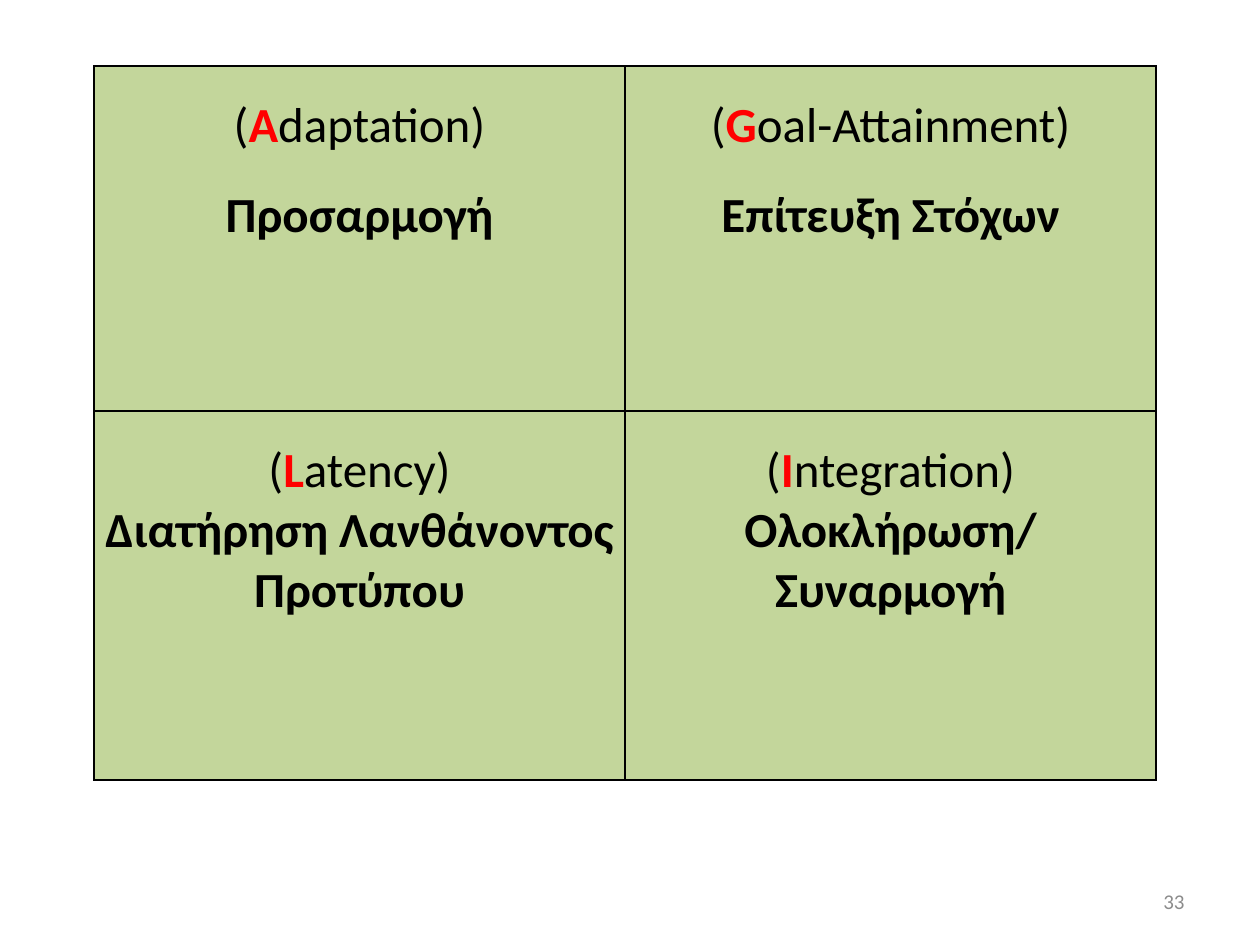
import pptx
import pptx.util
import pptx.dml.color
import pptx.enum.text
from lxml import etree

ALIGN = pptx.enum.text.PP_ALIGN
ANCHOR = pptx.enum.text.MSO_ANCHOR
RGB = pptx.dml.color.RGBColor
BLACK = RGB(0x00, 0x00, 0x00)
RED = RGB(0xFF, 0x00, 0x00)
GREEN = RGB(0xC3, 0xD6, 0x9B)
GREY = RGB(0x8C, 0x8C, 0x8C)
FONT = "Calibri"

# Content: English function name, Greek lines, spacing of the Greek lines
FUNCTIONS = [
    [("Adaptation", ["Προσαρμογή"], 1.5),
     ("Goal-Attainment", ["Επίτευξη Στόχων"], 1.5)],
    [("Latency", ["Διατήρηση Λανθάνοντος", "Προτύπου"], 1.0),
     ("Integration", ["Ολοκλήρωση/", "Συναρμογή"], 1.0)],
]
PAGE_NUMBER = "33"

# Layout in px, 126 to the inch
COLUMN_WIDTH = 531
ROW_HEIGHTS = [345, 369]
TABLE_LEFT, TABLE_TOP = 94, 66
CELL_MARGIN = 9


def px(length):
    return pptx.util.Emu(round(length * 914400 / 126))


def add_text(paragraph, text, size=28, color=BLACK, bold=False):
    run = paragraph.add_run()
    run.text = text
    run.font.name = FONT
    run.font.size = pptx.util.Pt(size)
    run.font.color.rgb = color
    run.font.bold = bold


def add_borders(cell, color=BLACK, width=1):
    properties = cell._tc.get_or_add_tcPr()
    namespace = pptx.oxml.ns.nsdecls("a")
    for position, side in enumerate(("lnL", "lnR", "lnT", "lnB")):
        properties.insert(position, pptx.oxml.parse_xml(
            f'<a:{side} {namespace} w="{pptx.util.Pt(width)}"><a:solidFill>'
            f'<a:srgbClr val="{color}"/></a:solidFill></a:{side}>'))


def fill_cell(cell, name, greek_lines, greek_spacing):
    cell.fill.solid()
    cell.fill.fore_color.rgb = GREEN
    cell.margin_left = cell.margin_right = px(CELL_MARGIN)
    cell.margin_top = cell.margin_bottom = 0
    add_borders(cell)

    # English name with its initial picked out
    english = cell.text_frame.paragraphs[0]
    english.alignment = ALIGN.CENTER
    english.line_spacing = 1.5
    add_text(english, "(")
    add_text(english, name[0], color=RED, bold=True)
    add_text(english, name[1:] + ")")

    # Greek name
    for line in greek_lines:
        greek = cell.text_frame.add_paragraph()
        greek.alignment = ALIGN.CENTER
        greek.line_spacing = greek_spacing
        add_text(greek, line, bold=True)


def main():
    deck = pptx.Presentation()
    deck.slide_width, deck.slide_height = px(1260), px(945)
    slide = deck.slides.add_slide(deck.slide_layouts[6])

    # Page number
    number_box = slide.shapes.add_textbox(px(903), px(876), px(294), px(50))
    number_frame = number_box.text_frame
    number_frame.word_wrap = True
    number_frame.vertical_anchor = ANCHOR.MIDDLE
    number_frame.paragraphs[0].alignment = ALIGN.RIGHT
    add_text(number_frame.paragraphs[0], PAGE_NUMBER, size=12, color=GREY)

    # AGIL table
    agil = slide.shapes.add_table(
        len(FUNCTIONS), 2, px(TABLE_LEFT), px(TABLE_TOP),
        px(2 * COLUMN_WIDTH), px(sum(ROW_HEIGHTS))).table
    agil.first_row = agil.horz_banding = False
    for column in agil.columns:
        column.width = px(COLUMN_WIDTH)
    for r, (functions, height) in enumerate(zip(FUNCTIONS, ROW_HEIGHTS)):
        agil.rows[r].height = px(height)
        for c, function in enumerate(functions):
            fill_cell(agil.cell(r, c), *function)

    deck.save("out.pptx")


if __name__ == "__main__":
    main()
